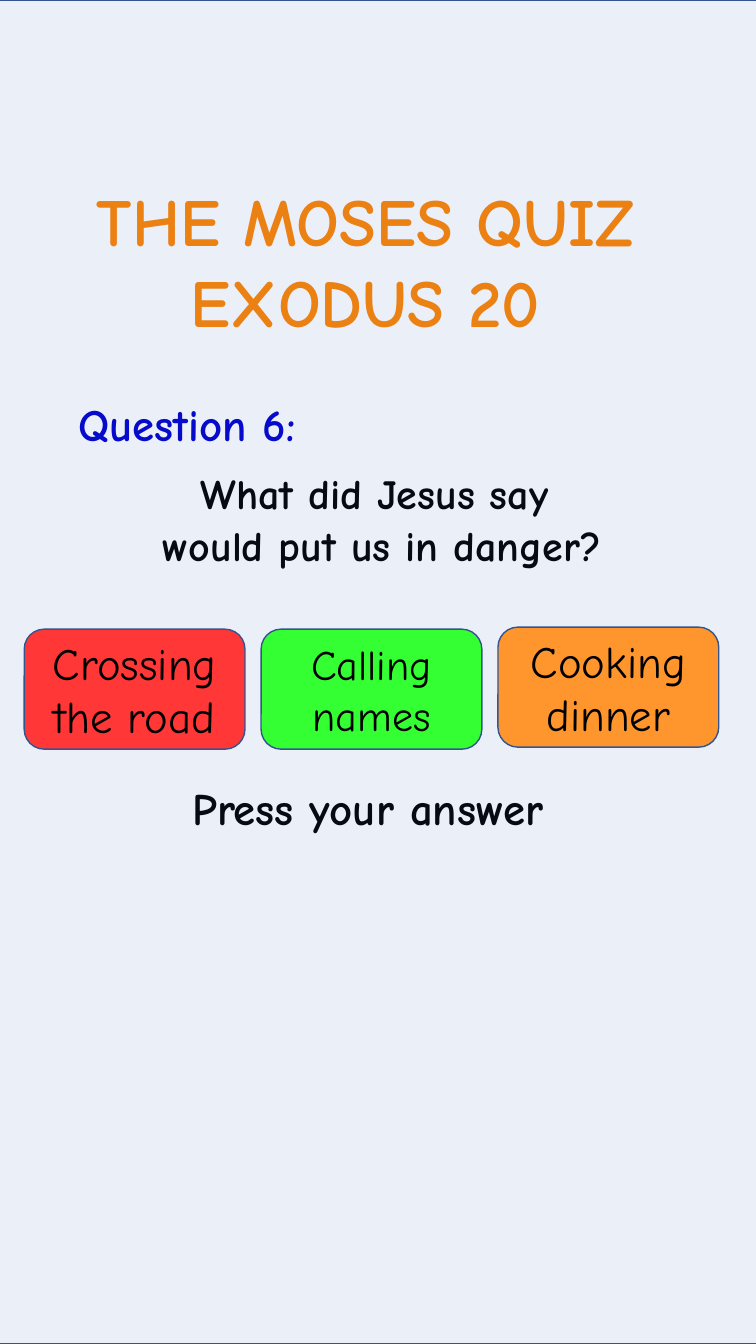
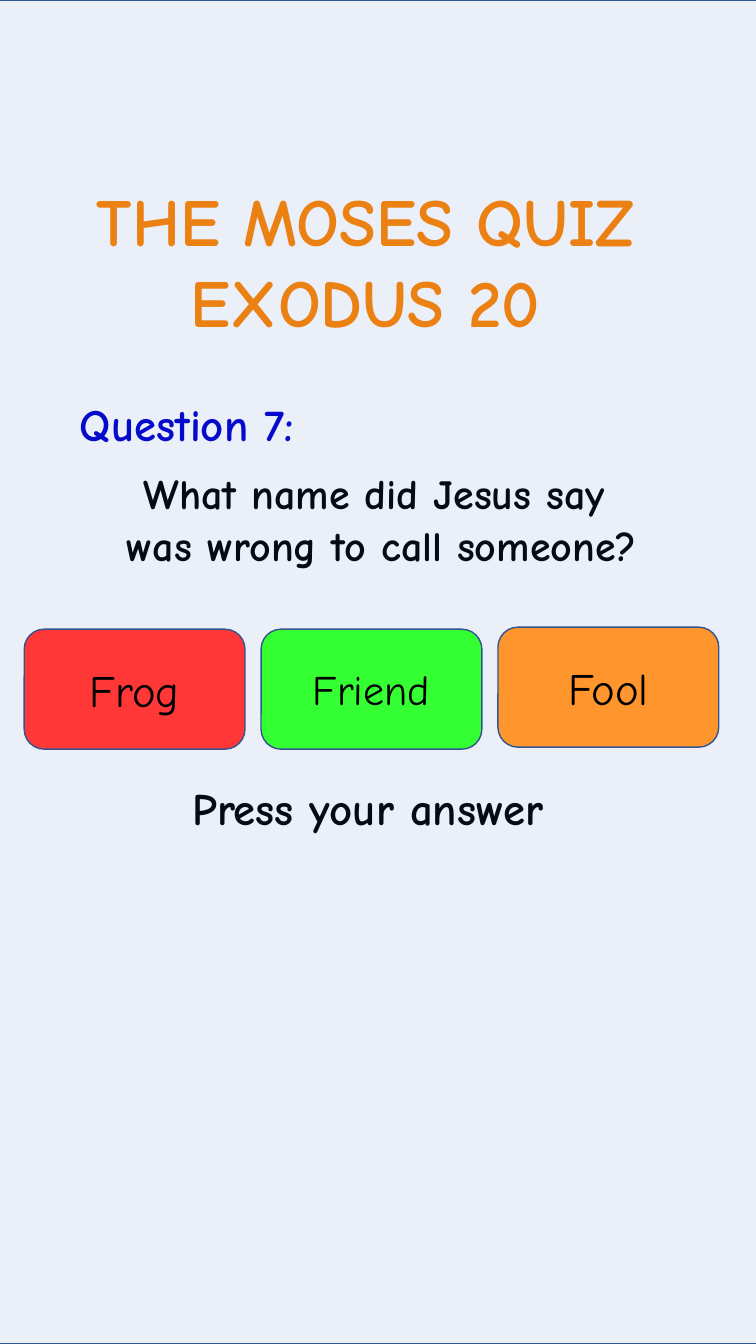
import pptx
import pptx.util
import pptx.dml.color
import pptx.enum.shapes
import pptx.enum.text
import pptx.oxml.ns
import lxml.etree

Inches = pptx.util.Inches
Pt = pptx.util.Pt
RGBColor = pptx.dml.color.RGBColor
Shapes = pptx.enum.shapes.MSO_SHAPE
Align = pptx.enum.text.PP_ALIGN
Anchor = pptx.enum.text.MSO_ANCHOR

BLACK = RGBColor(0x00, 0x00, 0x00)
TITLE_ORANGE = RGBColor(0xFF, 0x82, 0x00)
QUESTION_BLUE = RGBColor(0x00, 0x00, 0xCC)
VEIL_BLUE = RGBColor(0x44, 0x72, 0xC4)
OUTLINE_BLUE = RGBColor(0x32, 0x54, 0x91)
RED = RGBColor(0xFF, 0x37, 0x37)
GREEN = RGBColor(0x33, 0xFF, 0x33)
ORANGE = RGBColor(0xFF, 0x96, 0x2D)

FONT = "Comic Neue"
WIDTH, HEIGHT = 7.5, 13.33
TITLE = "THE MOSES QUIZ \nEXODUS 20 "
PROMPT = "Press your answer"
BUTTON_LEFT, BUTTON_STEP = 0.24, 2.35
BUTTON_WIDTH, BUTTON_HEIGHT = 2.19, 1.19
BUTTON_STYLES = [(RED, 6.24, 32), (GREEN, 6.24, 30), (ORANGE, 6.22, 32)]  # fill, top, text size

QUESTIONS = [
    ("Question 6:", "What did Jesus say \nwould put us in danger?",
     ["Crossing the road", "Calling names", "Cooking dinner"]),
    ("Question 7:", "What name did Jesus say \nwas wrong to call someone?",
     ["Frog", "Friend", "Fool"]),
]


class QuizDeck:
    """Holds the presentation, the shared style and the current slide."""

    def __init__(self):
        self.deck = pptx.Presentation()
        self.deck.slide_width = Inches(WIDTH)
        self.deck.slide_height = Inches(HEIGHT)
        self.slide = None

    def new_slide(self):
        self.slide = self.deck.slides.add_slide(self.deck.slide_layouts[5])

    def set_text(self, shape, text, size, color=BLACK, bold=True, align=Align.CENTER,
                 anchor=Anchor.TOP, wrap=True, line_spacing=1.0, space_before=0):
        frame = shape.text_frame
        frame.text = text
        frame.word_wrap = wrap
        frame.auto_size = pptx.enum.text.MSO_AUTO_SIZE.NONE
        frame.vertical_anchor = anchor
        for para in frame.paragraphs:
            para.alignment = align
            para.line_spacing = line_spacing
            para.space_before = Pt(space_before)
            para.font.name = FONT
            para.font.size = Pt(size)
            para.font.bold = bold
            para.font.color.rgb = color

    def title(self, text):
        title = self.slide.shapes.title
        title.left, title.top = Inches(0.3), Inches(1.73)
        title.width, title.height = Inches(6.89), Inches(1.72)
        self.set_text(title, text, 48, TITLE_ORANGE, wrap=False)

    def text(self, left, top, width, height, text, size, **style):
        box = self.slide.shapes.add_textbox(
            Inches(left), Inches(top), Inches(width), Inches(height))
        self.set_text(box, text, size, **style)

    def outlined_shape(self, kind, left, top, width, height, fill):
        shape = self.slide.shapes.add_shape(
            kind, Inches(left), Inches(top), Inches(width), Inches(height))
        shape.shadow.inherit = False
        shape.fill.solid()
        shape.fill.fore_color.rgb = fill
        shape.line.color.rgb = OUTLINE_BLUE
        shape.line.width = Pt(1)
        return shape

    def veil(self):
        """Tint everything drawn so far with a sheet that is 10 % opaque."""
        sheet = self.outlined_shape(Shapes.RECTANGLE, -0.24, 0, 7.98, HEIGHT, VEIL_BLUE)
        color = sheet.element.find(".//" + pptx.oxml.ns.qn("a:srgbClr"))
        lxml.etree.SubElement(color, pptx.oxml.ns.qn("a:alpha"), val="10000")

    def answers(self, labels):
        for column, (label, (fill, top, size)) in enumerate(zip(labels, BUTTON_STYLES)):
            button = self.outlined_shape(
                Shapes.ROUNDED_RECTANGLE, BUTTON_LEFT + column * BUTTON_STEP, top,
                BUTTON_WIDTH, BUTTON_HEIGHT, fill)
            self.set_text(button, label, size, bold=False, anchor=Anchor.MIDDLE)

    def question(self, heading, wording, labels):
        self.new_slide()
        self.title(TITLE)
        self.text(0.47, 3.89, 2.77, 0.64, heading, 32, color=QUESTION_BLUE, wrap=False)
        self.text(0.16, 4.67, 7.26, 1.4, wording, 30, line_spacing=Pt(30), space_before=7.5)
        self.text(1.81, 7.75, 4.22, 0.72, PROMPT, 32, align=Align.LEFT,
                  line_spacing=0.9, space_before=7.5)
        self.veil()
        self.answers(labels)


def main():
    quiz = QuizDeck()
    for heading, wording, labels in QUESTIONS:
        quiz.question(heading, wording, labels)
    quiz.deck.save("out.pptx")


if __name__ == "__main__":
    main()
